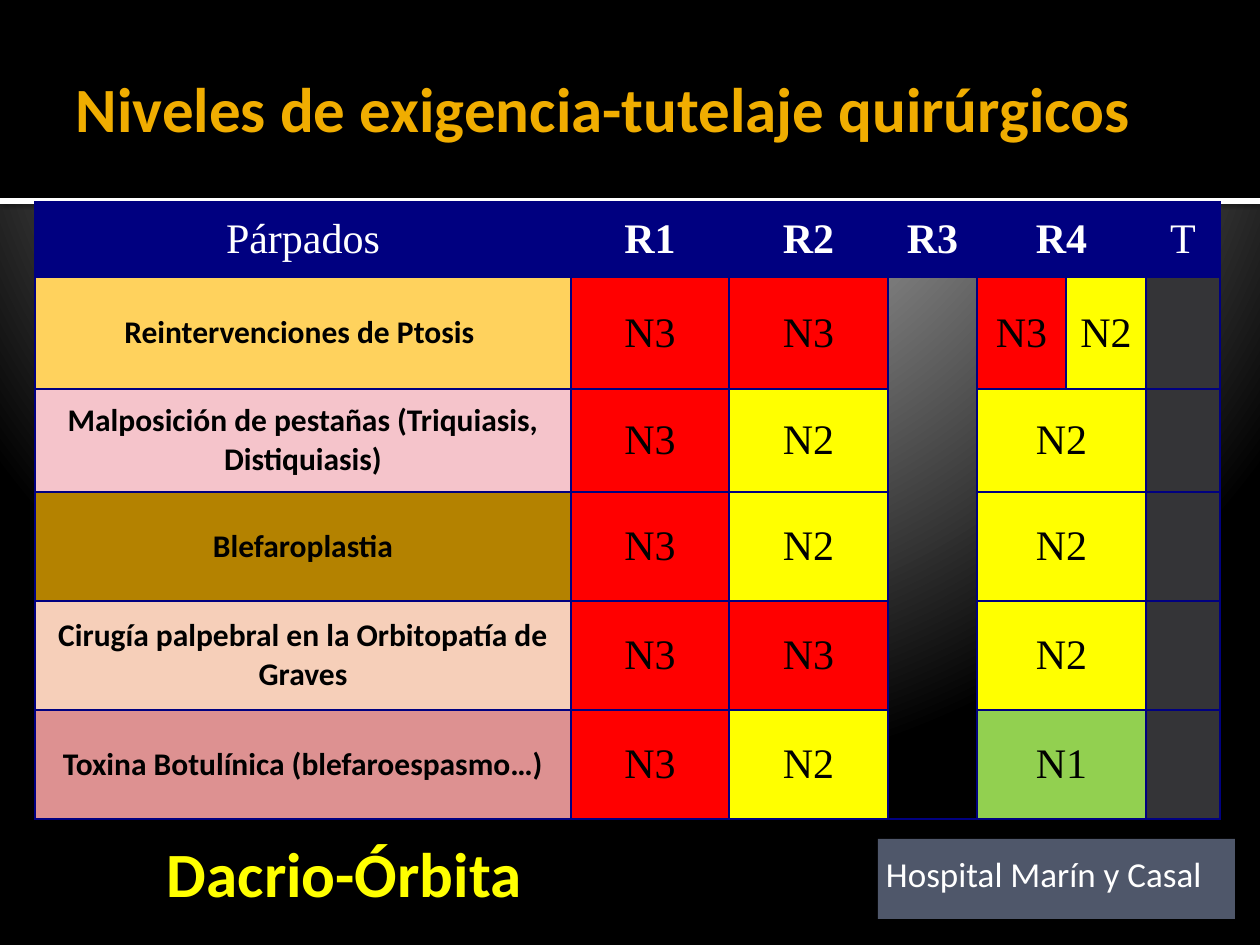
from dataclasses import dataclass

import pptx
import pptx.dml.color
import pptx.enum.shapes
import pptx.enum.text
import pptx.oxml
import pptx.oxml.ns
import pptx.util

ALIGN = pptx.enum.text.PP_ALIGN
ANCHOR = pptx.enum.text.MSO_ANCHOR
NS = pptx.oxml.ns.nsdecls("a", "p")


@dataclass(frozen=True)
class Theme:
    """Colours, fonts and type sizes of the slide."""
    sans: str = "Calibri"
    serif: str = "Times New Roman"
    heading_size: int = 36
    level_size: int = 24
    footer_size: int = 20
    procedure_size: int = 18
    white: str = "FFFFFF"
    black: str = "000000"
    gold: str = "F0AD00"
    yellow: str = "FFFF00"
    navy: str = "000080"
    slate: str = "4F576A"
    charcoal: str = "343437"


THEME = Theme()
LEVEL_FILLS = {"N1": "92D050", "N2": THEME.yellow, "N3": "FF0000"}
BACKDROP_STOPS = [(0, "C0C0C0"), (12, "C0C0C0"), (20, "BEBEBE"), (100, "000000")]
COLUMN_WIDTHS = [536, 158, 159, 89, 89, 80, 74]
ROW_HEIGHTS = [75, 112, 103, 109, 109, 109]
HEADINGS = ["Párpados", "R1", "R2", "R3", "R4", None, "T"]
R3, R4, R4_LATE, TUTOR = 3, 4, 5, 6
PROCEDURES = [
    ("Reintervenciones de Ptosis ", "FFD25D", ["N3", "N3"], ["N3", "N2"]),
    ("Malposición de pestañas (Triquiasis, Distiquiasis)", "F5C4CB", ["N3", "N2"], ["N2"]),
    ("Blefaroplastia", "B48200", ["N3", "N2"], ["N2"]),
    ("Cirugía palpebral en la Orbitopatía de Graves", "F6CFB9", ["N3", "N3"], ["N2"]),
    ("Toxina Botulínica (blefaroespasmo…)", "DD9191", ["N3", "N2"], ["N1"]),
]


def px(length):
    """Turn pixels into EMU."""
    return pptx.util.Emu(round(length * 914400 / 126))


def rgb(colour):
    """Return the colour object of a hex string."""
    return pptx.dml.color.RGBColor.from_string(colour)


def write(frame, text, *, size, colour, font=THEME.sans, bold=False, align=ALIGN.LEFT):
    """Write one formatted paragraph into a text frame."""
    paragraph = frame.paragraphs[0]
    paragraph.alignment = align
    run = paragraph.add_run()
    run.text = text
    run.font.name = font
    run.font.size = pptx.util.Pt(size)
    run.font.bold = bold
    run.font.color.rgb = rgb(colour)


def set_insets(holder, left, top, right, bottom):
    """Set the four inner margins of a text frame or cell."""
    holder.margin_left, holder.margin_top = px(left), px(top)
    holder.margin_right, holder.margin_bottom = px(right), px(bottom)


def add_band(slide, box, colour):
    """Add a plain filled rectangle."""
    band = slide.shapes.add_shape(pptx.enum.shapes.MSO_SHAPE.RECTANGLE, *map(px, box))
    band.shadow.inherit = False
    band.fill.solid()
    band.fill.fore_color.rgb = rgb(colour)
    band.line.fill.background()
    return band


def add_label(slide, box, text, anchor=ANCHOR.TOP, **style):
    """Add a wrapping text box."""
    frame = slide.shapes.add_textbox(*map(px, box)).text_frame
    frame.word_wrap = True
    frame.vertical_anchor = anchor
    set_insets(frame, 13, 6, 6, 6)
    write(frame, text, **style)


def set_backdrop(slide):
    """Give the slide its circular gradient background."""
    stops = "".join(f'<a:gs pos="{at * 1000}"><a:srgbClr val="{colour}"/></a:gs>'
                    for at, colour in BACKDROP_STOPS)
    backdrop = pptx.oxml.parse_xml(
        f'<p:bg {NS}><p:bgPr><a:gradFill rotWithShape="1"><a:gsLst>{stops}</a:gsLst>'
        '<a:path path="circle"><a:fillToRect l="10000" t="-25000" r="10000" b="125000"/>'
        '</a:path></a:gradFill><a:effectLst/></p:bgPr></p:bg>')
    slide.element.cSld.insert(0, backdrop)


def cast_shadow(band):
    """Put a soft shadow below a band."""
    effects = band.element.spPr.find(pptx.oxml.ns.qn("a:effectLst"))
    effects.append(pptx.oxml.parse_xml(
        f'<a:outerShdw {NS} blurRad="31750" dist="10160" dir="5400000" rotWithShape="0">'
        '<a:srgbClr val="000000"><a:alpha val="60000"/></a:srgbClr></a:outerShdw>'))


def format_cell(cell, fill=None, text=None, **style):
    """Fill, border and caption one table cell."""
    cell.vertical_anchor = ANCHOR.MIDDLE
    set_insets(cell, 9, 0, 9, 0)
    if fill:
        cell.fill.solid()
        cell.fill.fore_color.rgb = rgb(fill)
    else:
        cell.fill.background()
    properties = cell._tc.get_or_add_tcPr()
    for place, side in enumerate("LRTB"):
        properties.insert(place, pptx.oxml.parse_xml(
            f'<a:ln{side} {NS} w="12700"><a:solidFill><a:srgbClr val="{THEME.navy}"/>'
            f'</a:solidFill></a:ln{side}>'))
    if text:
        write(cell.text_frame, text, align=ALIGN.CENTER, **style)


def fill_header(table):
    """Write the header row."""
    for column, heading in enumerate(HEADINGS):
        format_cell(table.cell(0, column), THEME.navy, heading, size=THEME.level_size,
                    font=THEME.serif, colour=THEME.white, bold=heading in ("R1", "R2", "R3", "R4"))
    table.cell(0, R4).merge(table.cell(0, R4_LATE))


def fill_procedure(table, row, procedure):
    """Write one procedure with its levels for each year."""
    name, name_fill, early_levels, late_levels = procedure
    format_cell(table.cell(row, 0), name_fill, name, size=THEME.procedure_size,
                colour=THEME.black, bold=True)
    levels = [*enumerate(early_levels, 1), *enumerate(late_levels, R4)]
    for column, level in levels:
        format_cell(table.cell(row, column), LEVEL_FILLS[level], level,
                    size=THEME.level_size, font=THEME.serif, colour=THEME.black)
    if len(late_levels) == 1:
        format_cell(table.cell(row, R4_LATE), LEVEL_FILLS[late_levels[0]])
        table.cell(row, R4).merge(table.cell(row, R4_LATE))
    format_cell(table.cell(row, R3))
    format_cell(table.cell(row, TUTOR), THEME.charcoal)


def add_levels_table(slide):
    """Add the table of procedures and required levels."""
    box = (35, 202, sum(COLUMN_WIDTHS), sum(ROW_HEIGHTS))
    table = slide.shapes.add_table(len(ROW_HEIGHTS), len(COLUMN_WIDTHS), *map(px, box)).table
    table.horz_banding = False
    for column, width in zip(table.columns, COLUMN_WIDTHS):
        column.width = px(width)
    for row, height in zip(table.rows, ROW_HEIGHTS):
        row.height = px(height)
    fill_header(table)
    for row, procedure in enumerate(PROCEDURES, 1):
        fill_procedure(table, row, procedure)
    table.cell(1, R3).merge(table.cell(len(PROCEDURES), R3))


def add_footer(slide):
    """Add the hospital name on its panel."""
    panel = add_band(slide, (878, 839, 357, 80), THEME.slate)
    frame = panel.text_frame
    frame.word_wrap = True
    frame.vertical_anchor = ANCHOR.TOP
    set_insets(frame, 8, 13, 13, 6)
    write(frame, "Hospital Marín y Casal", size=THEME.footer_size, colour=THEME.white)


def main():
    """Build and save the slide."""
    deck = pptx.Presentation()
    deck.slide_width, deck.slide_height = px(1260), px(945)
    slide = deck.slides.add_slide(deck.slide_layouts[6])
    set_backdrop(slide)
    cast_shadow(add_band(slide, (0, 198, 1260, 6), THEME.white))
    add_band(slide, (0, 0, 1260, 198), THEME.black)
    add_label(slide, (63, 21, 1134, 173), "Niveles de exigencia-tutelaje quirúrgicos",
              anchor=ANCHOR.MIDDLE, size=THEME.heading_size, colour=THEME.gold, bold=True)
    add_label(slide, (154, 829, 525, 89), "Dacrio-Órbita",
              size=THEME.heading_size, colour=THEME.yellow, bold=True)
    add_footer(slide)
    add_levels_table(slide)
    deck.save("out.pptx")


if __name__ == "__main__":
    main()
